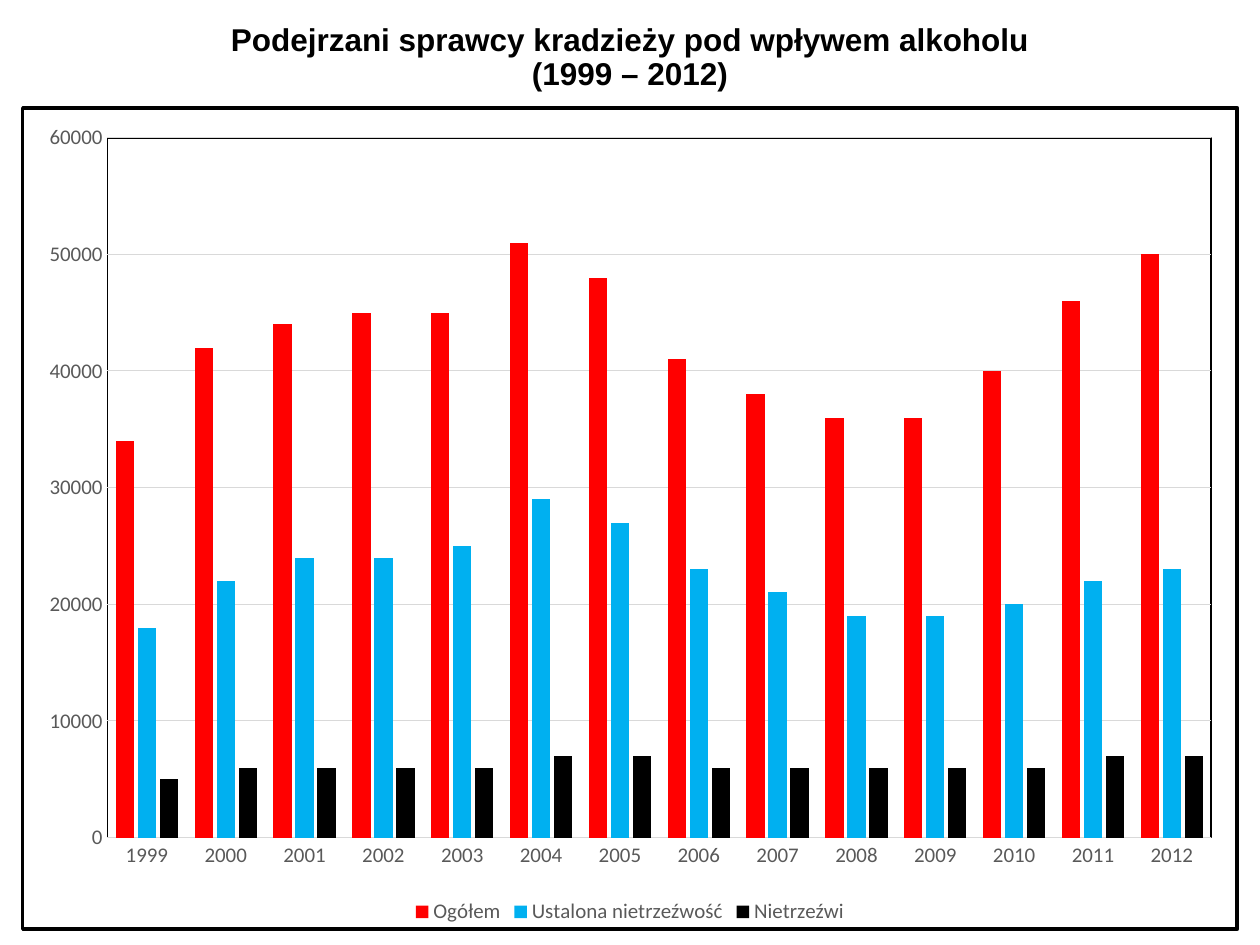
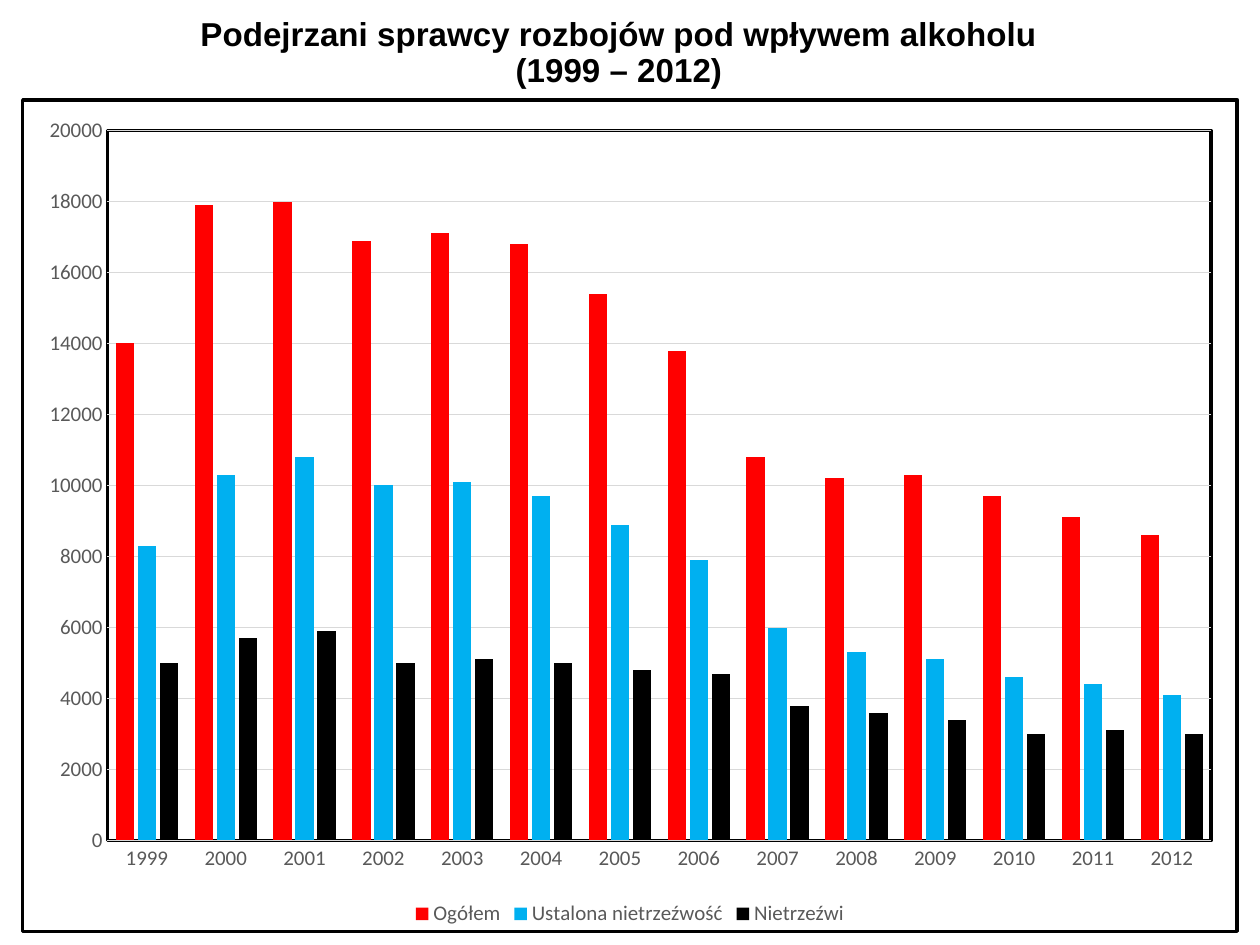
from lxml import etree
from pptx import Presentation
from pptx.chart.data import CategoryChartData
from pptx.dml.color import RGBColor
from pptx.enum.chart import XL_CHART_TYPE, XL_LEGEND_POSITION, XL_TICK_MARK
from pptx.enum.text import MSO_ANCHOR, MSO_AUTO_SIZE, PP_ALIGN
from pptx.oxml import parse_xml
from pptx.oxml.ns import qn
from pptx.util import Pt

CLUSTERED = XL_CHART_TYPE.COLUMN_CLUSTERED
BOTTOM = XL_LEGEND_POSITION.BOTTOM
NO_TICK = XL_TICK_MARK.NONE
CENTER = PP_ALIGN.CENTER
MIDDLE = MSO_ANCHOR.MIDDLE
NO_FIT = MSO_AUTO_SIZE.NONE

# Content
YEARS = [str(year) for year in range(1999, 2013)]
SERIES = [("Ogółem", "FF0000"), ("Ustalona nietrzeźwość", "00B0F0"), ("Nietrzeźwi", "000000")]
SLIDES = [
    {
        "title": "Podejrzani sprawcy kradzieży pod wpływem alkoholu\v(1999 – 2012)",
        "title_box": (87, 11, 1086, 95),
        "title_size": 18,
        "chart_box": (21, 106, 1218, 825),
        "plot_box": (106, 136, 1107, 703),
        "plot_line": 1,
        "scale": (60000, 10000),
        "values": [
            [34000, 42000, 44000, 45000, 45000, 51000, 48000,
             41000, 38000, 36000, 36000, 40000, 46000, 50000],
            [18000, 22000, 24000, 24000, 25000, 29000, 27000,
             23000, 21000, 19000, 19000, 20000, 22000, 23000],
            [5000, 6000, 6000, 6000, 6000, 7000, 7000,
             6000, 6000, 6000, 6000, 6000, 7000, 7000],
        ],
    },
    {
        "title": "Podejrzani sprawcy rozbojów pod wpływem alkoholu\v(1999 – 2012)",
        "title_box": (76, 9, 1086, 89),
        "title_size": 18.9,
        "chart_box": (21, 98, 1218, 835),
        "plot_box": (106, 129, 1107, 713),
        "plot_line": 2,
        "scale": (20000, 2000),
        "values": [
            [14000, 17900, 18000, 16900, 17100, 16800, 15400,
             13800, 10800, 10200, 10300, 9700, 9100, 8600],
            [8300, 10300, 10800, 10000, 10100, 9700, 8900,
             7900, 6000, 5300, 5100, 4600, 4400, 4100],
            [5000, 5700, 5900, 5000, 5100, 5000, 4800,
             4700, 3800, 3600, 3400, 3000, 3100, 3000],
        ],
    },
]

# Shared look
BLACK, GREY, GRID = "000000", "595959", "D9D9D9"
EMU_PER_PX = 914400 / 126
NS = ('xmlns:c="http://schemas.openxmlformats.org/drawingml/2006/chart" '
      'xmlns:a="http://schemas.openxmlformats.org/drawingml/2006/main"')


def px(n):
    return round(n * EMU_PER_PX)


def rgb(color):
    return RGBColor.from_string(color)


def set_font(font, name, size, color):
    font.name, font.size = name, Pt(size)
    font.color.rgb = rgb(color)


def set_line(line, color, width):
    line.color.rgb = rgb(color)
    line.width = Pt(width)


def outline(width):
    return parse_xml(f'<c:spPr {NS}><a:noFill/><a:ln w="{Pt(width)}"><a:solidFill>'
                     f'<a:srgbClr val="{BLACK}"/></a:solidFill></a:ln></c:spPr>')


def place_plot(plot_area, plot_box, chart_box):
    """Fix the inner plot area as fractions of the chart frame."""
    left, top, width, height = chart_box
    x, y, w, h = plot_box
    fractions = {"x": (x - left) / width, "y": (y - top) / height,
                 "w": w / width, "h": h / height}
    for old in plot_area.findall(qn("c:layout")):
        plot_area.remove(old)
    layout = etree.Element(qn("c:layout"))
    manual = etree.SubElement(layout, qn("c:manualLayout"))
    settings = [("layoutTarget", "inner"), ("xMode", "edge"), ("yMode", "edge")]
    settings += [(key, f"{value:.4f}") for key, value in fractions.items()]
    for tag, value in settings:
        etree.SubElement(manual, qn(f"c:{tag}")).set("val", value)
    plot_area.insert(0, layout)


def add_title(slide, item):
    sp = slide.shapes.title
    sp.left, sp.top, sp.width, sp.height = map(px, item["title_box"])
    tf = sp.text_frame
    tf.text = item["title"]
    tf.auto_size, tf.vertical_anchor, tf.word_wrap = NO_FIT, MIDDLE, True
    p = tf.paragraphs[0]
    p.alignment, p.line_spacing = CENTER, 0.9
    set_font(p.font, "Arial", item["title_size"], BLACK)
    p.font.bold = True


def add_column_chart(slide, item):
    data = CategoryChartData()
    data.categories = YEARS
    for (name, _), values in zip(SERIES, item["values"]):
        data.add_series(name, values)
    chart = slide.shapes.add_chart(CLUSTERED, *map(px, item["chart_box"]), data).chart
    set_font(chart.font, "Calibri", 10, BLACK)
    chart.has_title = False

    # Columns
    plot = chart.plots[0]
    plot.gap_width, plot.overlap, plot.vary_by_categories = 90, -20, False
    for series, (_, color) in zip(plot.series, SERIES):
        series.format.fill.solid()
        series.format.fill.fore_color.rgb = rgb(color)
        series.invert_if_negative = False

    # Axes
    cat, val = chart.category_axis, chart.value_axis
    for axis in (cat, val):
        axis.major_tick_mark = axis.minor_tick_mark = NO_TICK
        set_font(axis.tick_labels.font, "Calibri", 12, GREY)
    set_line(cat.format.line, GRID, 0.75)
    val.format.line.fill.background()
    set_line(val.major_gridlines.format.line, GRID, 0.75)
    val.minimum_scale = 0
    val.maximum_scale, val.major_unit = item["scale"]

    # Legend
    chart.has_legend = True
    chart.legend.position = BOTTOM
    chart.legend.include_in_layout = False
    set_font(chart.legend.font, "Calibri", 12, GREY)

    # Plot position and frames
    root = chart.element.find(qn("c:chart"))
    plot_area = root.find(qn("c:plotArea"))
    place_plot(plot_area, item["plot_box"], item["chart_box"])
    plot_area.append(outline(item["plot_line"]))
    root.addnext(outline(2))


def main():
    prs = Presentation()
    prs.slide_width, prs.slide_height = px(1260), px(945)
    title_only = prs.slide_layouts[5]
    for item in SLIDES:
        slide = prs.slides.add_slide(title_only)
        add_title(slide, item)
        add_column_chart(slide, item)
    prs.save("out.pptx")


if __name__ == "__main__":
    main()
